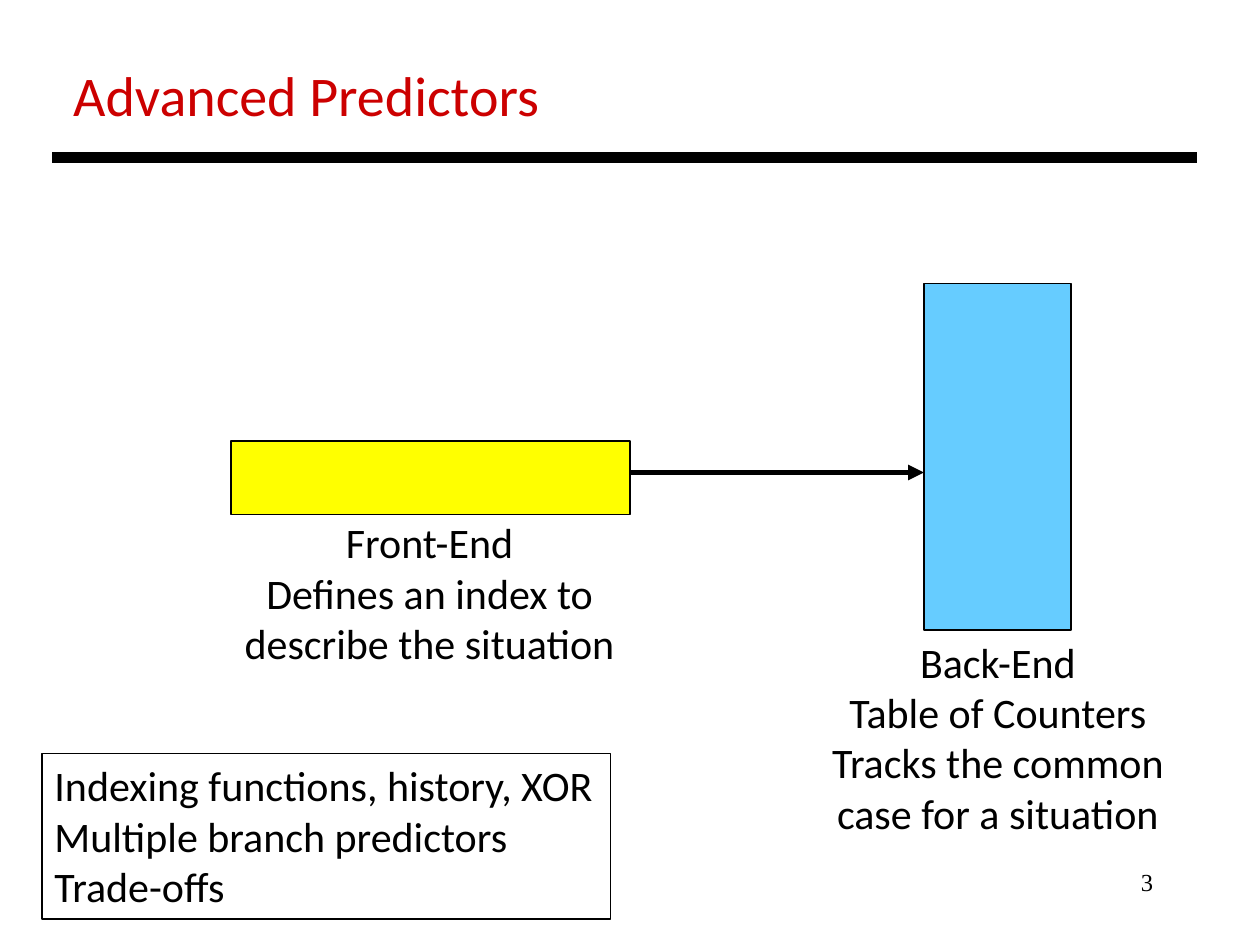
from pptx import Presentation
from pptx.util import Pt
from pptx.dml.color import RGBColor
from pptx.enum import shapes, text
from pptx.oxml.ns import qn
from lxml import etree

HUES = {"ink": "000000", "title": "CC0000", "front": "FFFF00", "back": "66CCFF"}
SANS, SERIF = "Calibri", "Times New Roman"
LEFT, MID, RIGHT = text.PP_ALIGN.LEFT, text.PP_ALIGN.CENTER, text.PP_ALIGN.RIGHT

BOXES = [
    ((132, 252, 228, 42), "front"),
    ((528, 162, 84, 198), "back"),
]
LINES = [
    ((30, 90, 684, 90), 6, False),
    ((360, 270, 528, 270), 3, True),
]
TEXTS = [
    (["3"], (516, 492, 150, 36), RIGHT, SERIF, 14, "ink", True, False),
    (["Advanced Predictors"], (34.75, 31, 284, 46), LEFT, SANS, 32, "title", False, False),
    (["Indexing functions, history, XOR", "Multiple branch predictors", "Trade-offs"],
     (24, 430.75, 325, 94.5), LEFT, SANS, 24, "ink", False, True),
    (["Back-End", "Table of Counters", "Tracks the common case for a situation"],
     (450, 360, 240.5, 124), MID, SANS, 24, "ink", True, False),
    (["Front-End", "Defines an index to describe the situation"],
     (125.25, 291.75, 240.5, 94.5), MID, SANS, 24, "ink", True, False),
]


def hue(name):
    return RGBColor.from_string(HUES[name])


def stroke(line, width):
    line.color.rgb = hue("ink")
    line.width = Pt(width)


def add_box(slide, spot, fill):
    box = slide.shapes.add_shape(shapes.MSO_SHAPE.RECTANGLE, *map(Pt, spot))
    box.shadow.inherit = False
    box.fill.solid()
    box.fill.fore_color.rgb = hue(fill)
    stroke(box.line, 0.75)


def add_line(slide, ends, width, arrow):
    link = slide.shapes.add_connector(shapes.MSO_CONNECTOR.STRAIGHT, *map(Pt, ends))
    stroke(link.line, width)
    if arrow:
        etree.SubElement(link.line._get_or_add_ln(), qn("a:tailEnd"), type="triangle")
    etree.SubElement(link._element.spPr, qn("a:effectLst"))


def add_text(slide, rows, spot, align, face, size, tint, wrap, frame):
    box = slide.shapes.add_textbox(*map(Pt, spot))
    box.text_frame.word_wrap = wrap
    if frame:
        stroke(box.line, 0.75)
    box.text_frame.text = "\n".join(rows)
    look = {"name": face, "size": Pt(size)}
    for para in box.text_frame.paragraphs:
        para.alignment = align
        font = para.runs[0].font
        for key, value in look.items():
            setattr(font, key, value)
        font.color.rgb = hue(tint)


def main():
    deck = Presentation()
    deck.slide_width, deck.slide_height = Pt(720), Pt(540)
    slide = deck.slides.add_slide(deck.slide_layouts[6])
    for add, items in ((add_box, BOXES), (add_line, LINES), (add_text, TEXTS)):
        for item in items:
            add(slide, *item)
    deck.save("out.pptx")


if __name__ == "__main__":
    main()
